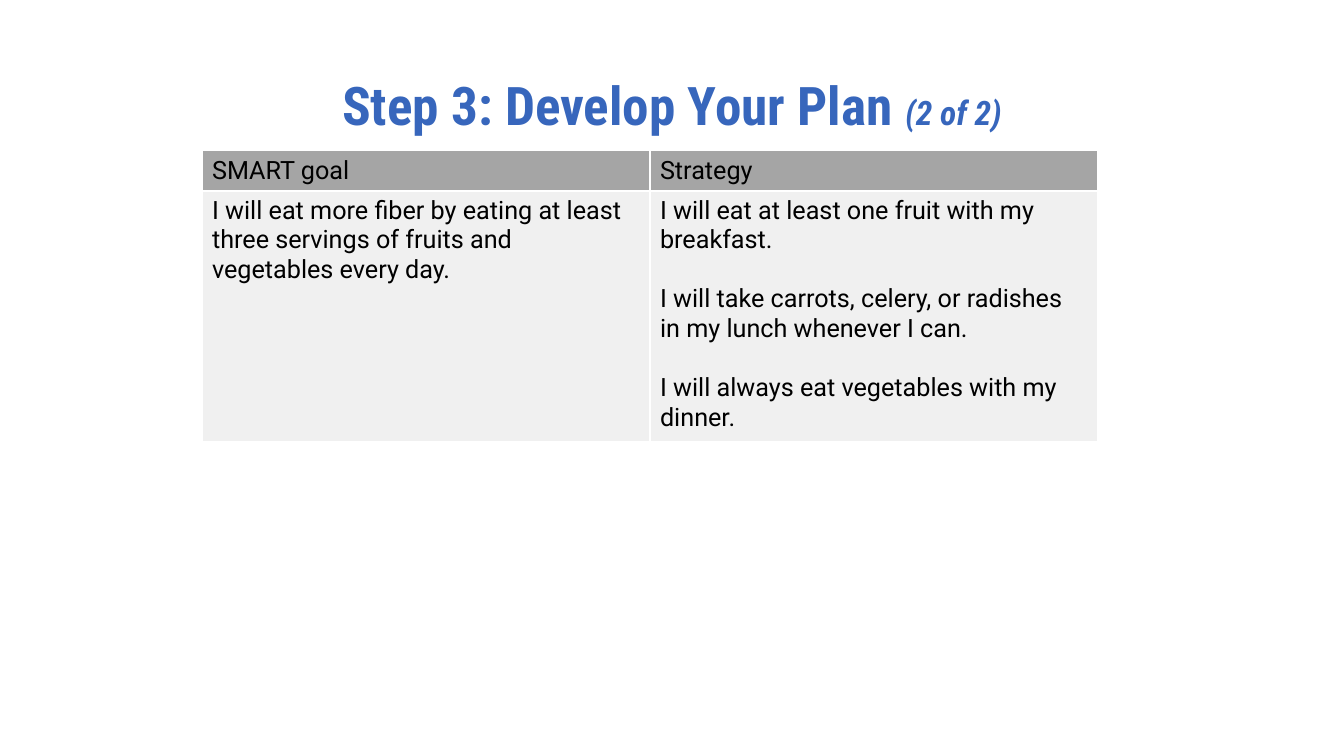
import pptx
import pptx.util
import pptx.dml.color
import pptx.enum.text
import lxml.etree

PX = 914400 / 100.8
FONT = "Roboto"
BLUE, BLACK, WHITE = "3766BC", "000000", "FFFFFF"
DRAWING = "{http://schemas.openxmlformats.org/drawingml/2006/main}"


def rgb(value):
    return pptx.dml.color.RGBColor.from_string(value)


def add_text(paragraph, text, size=18, font=FONT, color=BLACK, bold=False, italic=False):
    run = paragraph.add_run()
    run.text = text
    run.font.size = pptx.util.Pt(size)
    run.font.name = font
    run.font.bold = bold
    run.font.italic = italic
    run.font.color.rgb = rgb(color)


deck = pptx.Presentation()
deck.slide_width = round(1344 * PX)
deck.slide_height = round(756 * PX)
slide = deck.slides.add_slide(deck.slide_layouts[6])

title_box = slide.shapes.add_textbox(0, round(61 * PX), round(1344 * PX), round(94 * PX))
title = title_box.text_frame
title.word_wrap = True
title.vertical_anchor = pptx.enum.text.MSO_ANCHOR.MIDDLE
title.margin_left = title.margin_right = title.margin_top = title.margin_bottom = 0
heading = title.paragraphs[0]
heading.alignment = pptx.enum.text.PP_ALIGN.CENTER
heading.line_spacing = 0.9
add_text(heading, "Step 3: Develop Your Plan ", size=38, font="Roboto Condensed", color=BLUE, bold=True)
add_text(heading, "(2 of 2)", size=24, font="Roboto Condensed", color=BLUE, bold=True, italic=True)

plan_rows = [
    (41, "A5A5A5", pptx.enum.text.MSO_ANCHOR.BOTTOM, [["SMART goal"], ["Strategy"]]),
    (246, "F0F0F0", pptx.enum.text.MSO_ANCHOR.TOP, [
        ["I will eat more fiber by eating at least three servings of fruits and vegetables every day."],
        [
            "I will eat at least one fruit with my breakfast.",
            "I will take carrots, celery, or radishes in my lunch whenever I can.",
            "I will always eat vegetables with my dinner.",
        ],
    ]),
]
plan = slide.shapes.add_table(
    2, 2, round(202 * PX), round(150 * PX), round(896 * PX), round(287 * PX)
).table
plan.horz_banding = False

for row, (height, fill, anchor, entries) in enumerate(plan_rows):
    plan.rows[row].height = round(height * PX)
    for column, sentences in enumerate(entries):
        cell = plan.cell(row, column)
        cell.vertical_anchor = anchor
        for side in ("lnL", "lnR", "lnT", "lnB"):
            border = lxml.etree.SubElement(cell._tc.get_or_add_tcPr(), DRAWING + side, w="12700")
            paint = lxml.etree.SubElement(border, DRAWING + "solidFill")
            lxml.etree.SubElement(paint, DRAWING + "srgbClr", val=WHITE)
        cell.fill.solid()
        cell.fill.fore_color.rgb = rgb(fill)
        for index, sentence in enumerate(sentences):
            if index == 0:
                paragraph = cell.text_frame.paragraphs[0]
            else:
                paragraph = cell.text_frame.add_paragraph()
                paragraph.space_before = pptx.util.Pt(21)
            add_text(paragraph, sentence)

deck.save("out.pptx")
